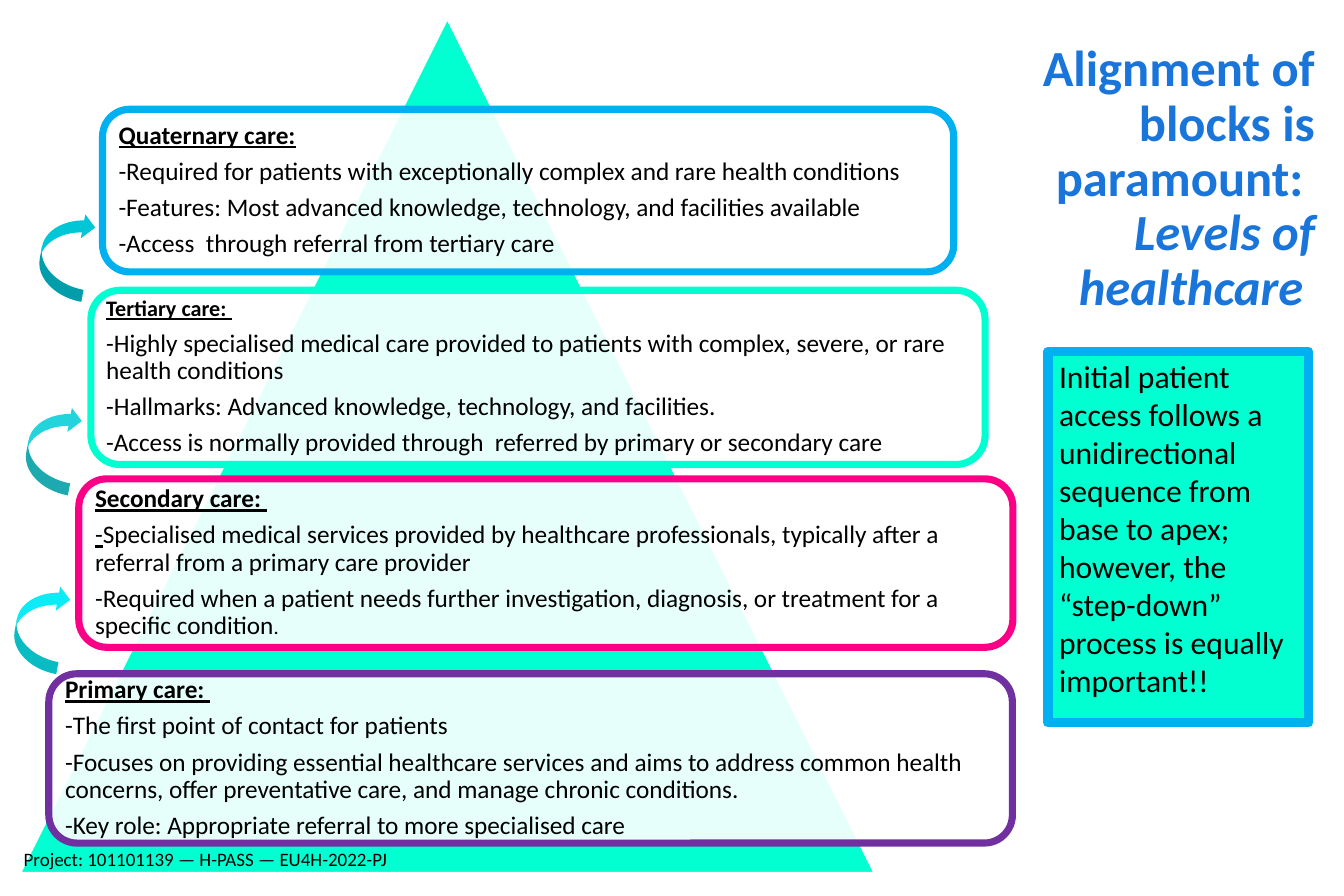
from dataclasses import dataclass

from lxml import etree
from pptx import Presentation
from pptx.dml.color import RGBColor
from pptx.enum import shapes as kinds, text as txt
from pptx.oxml import ns
from pptx.util import Cm, Pt

TURQUOISE, SKY, WHITE, BLACK, BLUE = "02FFD2", "00B0F0", "FFFFFF", "000000", "1A75DB"


@dataclass(frozen=True)
class Span:
    text: str
    size: float = 16
    bold: bool = False
    italic: bool = False
    underline: bool = False
    colour: str = BLACK


@dataclass(frozen=True)
class CareLevel:
    box: tuple[float, float, float, float]
    outline: str
    heading: Span
    points: list[list[Span]]
    inset: float = 0.18


@dataclass(frozen=True)
class Step:
    left: float
    top: float
    colour: str


def heading(words: str, size: float = 16) -> Span:
    return Span(words, size, bold=True, underline=True)


LEVELS = [
    CareLevel((1.09, 15.04, 21.51, 3.78), "7030A0", heading("Primary care: "), [
        [Span("-The first point of contact for patients")],
        [Span("-Focuses on providing essential healthcare services and aims to address common "
              "health concerns, offer preventative care, and manage chronic conditions.")],
        [Span("-Key role: Appropriate referral to more specialised care")],
    ]),
    CareLevel((1.76, 10.69, 20.85, 3.76), "FB0087", heading("Secondary care: "), [
        [Span("-", underline=True),
         Span("Specialised medical services provided by healthcare professionals, typically "
              "after a referral from a primary care provider")],
        [Span("-Required when a patient needs further investigation, diagnosis, or treatment "
              "for a specific condition"), Span(".", 13)],
    ]),
    CareLevel((2.03, 6.48, 19.96, 3.89), TURQUOISE, heading("Tertiary care: ", 14), [
        [Span("-Highly specialised medical care provided to patients with complex, severe, "
              "or rare health conditions")],
        [Span("-Hallmarks: Advanced knowledge, technology, and facilities.")],
        [Span("-Access is normally provided through  referred by primary or secondary care")],
    ], inset=0.15),
    CareLevel((2.29, 2.44, 19, 3.63), SKY, heading("Quaternary care:"), [
        [Span("-Required for patients with exceptionally complex and rare health conditions")],
        [Span("-Features: Most advanced knowledge, technology, and facilities available")],
        [Span("-Access  through referral from tertiary care")],
    ]),
]

STEPS = [Step(-0.08, 13.44, "0CEBF6"), Step(0.18, 9.45, "23D4DD"), Step(0.48, 5.13, "00C6D6")]


def rgb(colour: str) -> RGBColor:
    return RGBColor.from_string(colour)


def add_block(slide, kind, box, fill: str, outline: str | None = None, width: float = 1):
    block = slide.shapes.add_shape(kind, *map(Cm, box))
    block.shadow.inherit = False
    block.fill.solid()
    block.fill.fore_color.rgb = rgb(fill)
    if outline:
        block.line.color.rgb = rgb(outline)
        block.line.width = Pt(width)
    else:
        block.line.fill.background()
    return block


def set_opacity(block, percent: int) -> None:
    colour = block.fill._xPr.find(ns.qn("a:solidFill"))[0]
    etree.SubElement(colour, ns.qn("a:alpha")).set("val", str(percent * 1000))


def write(frame, lines: list[list[Span]], align=txt.PP_ALIGN.LEFT, spacing: float = 1,
          after: float = 0) -> None:
    """Fill a text frame with one paragraph per list of spans."""
    frame.word_wrap = True
    frame.auto_size = txt.MSO_AUTO_SIZE.NONE
    for index, spans in enumerate(lines):
        paragraph = frame.add_paragraph() if index else frame.paragraphs[0]
        paragraph.alignment = align
        paragraph.line_spacing = spacing
        paragraph.space_after = Pt(after)
        for span in spans:
            run = paragraph.add_run()
            run.text = span.text
            font = run.font
            font.name, font.size = "Calibri", Pt(span.size)
            font.bold, font.italic, font.underline = span.bold, span.italic, span.underline
            font.color.rgb = rgb(span.colour)


def add_title(slide) -> None:
    title = slide.shapes.title
    title.left, title.top, title.width, title.height = map(Cm, (21.41, 1.09, 8.2, 6.1))
    title.text_frame.vertical_anchor = txt.MSO_ANCHOR.BOTTOM
    write(title.text_frame, [
        [Span("Alignment of blocks is paramount: ", 32, bold=True, colour=BLUE)],
        [Span("Levels of healthcare ", 32, bold=True, italic=True, colour=BLUE)],
    ], txt.PP_ALIGN.RIGHT, spacing=0.9)


def add_level(slide, level: CareLevel) -> None:
    card = add_block(slide, kinds.MSO_SHAPE.ROUNDED_RECTANGLE, level.box, WHITE,
                     level.outline, 4.5)
    set_opacity(card, 90)
    frame = card.text_frame
    frame.margin_left = frame.margin_right = Cm(level.inset)
    frame.margin_top = frame.margin_bottom = Cm(level.inset)
    frame.vertical_anchor = txt.MSO_ANCHOR.MIDDLE
    write(frame, [[level.heading], *level.points], spacing=0.9, after=5.6)


def add_step(slide, step: Step) -> None:
    arrow = add_block(slide, kinds.MSO_SHAPE.CURVED_UP_ARROW,
                      (step.left, step.top, 1.96, 1.09), step.colour)
    arrow.rotation = 280.6
    arrow._element.spPr.find(ns.qn("a:xfrm")).set("flipV", "1")


def add_note(slide) -> None:
    note = add_block(slide, kinds.MSO_SHAPE.RECTANGLE, (23.39, 7.85, 5.82, 8.28),
                     TURQUOISE, SKY, 6)
    note.text_frame.vertical_anchor = txt.MSO_ANCHOR.TOP
    write(note.text_frame, [[Span(
        "Initial patient access follows a unidirectional sequence from base to apex; however, "
        "the “step-down” process is equally important!!", 20)]])


def add_project_line(slide) -> None:
    project = slide.shapes.add_textbox(*map(Cm, (0.28, 18.8, 9.22, 0.69)))
    write(project.text_frame, [[Span("Project: 101101139 — H-PASS — EU4H-2022-PJ", 12)]])


def main() -> None:
    deck = Presentation()
    deck.slide_width, deck.slide_height = Cm(30), Cm(20)
    slide = deck.slides.add_slide(deck.slide_layouts.get_by_name("Title Only"))
    add_title(slide)
    add_block(slide, kinds.MSO_SHAPE.ISOSCELES_TRIANGLE, (0.46, 0.43, 19.05, 19.05),
              TURQUOISE, WHITE)
    for level in LEVELS:
        add_level(slide, level)
    for step in STEPS:
        add_step(slide, step)
    add_note(slide)
    add_project_line(slide)
    deck.save("out.pptx")


if __name__ == "__main__":
    main()
